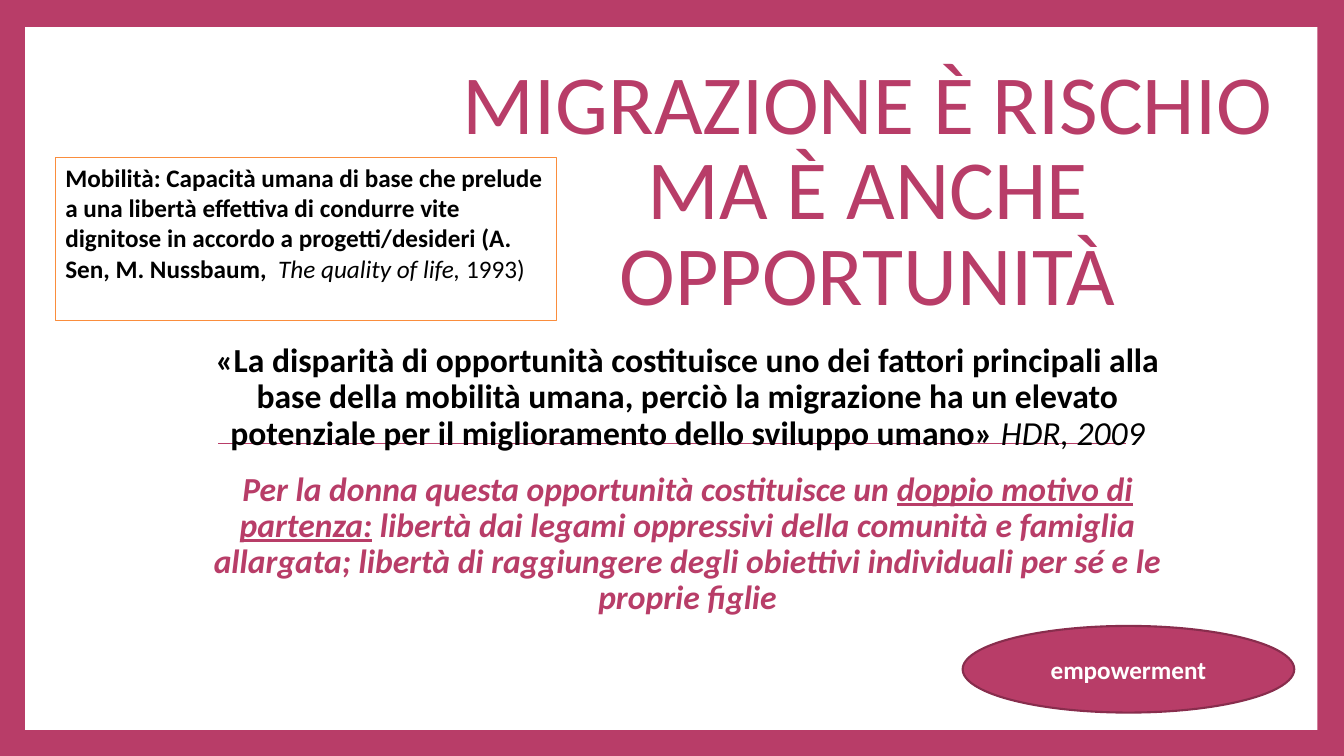
import pptx
import pptx.util
import pptx.dml.color
import pptx.enum.shapes
import pptx.enum.text
import pptx.oxml

Pt = pptx.util.Pt
ALIGN = pptx.enum.text.PP_ALIGN
ANCHOR = pptx.enum.text.MSO_ANCHOR
SHAPE = pptx.enum.shapes.MSO_SHAPE
COLOURS = {"rose": "B83D68", "plum": "882D4D", "orange": "FA8D3D",
           "white": "FFFFFF", "black": "000000"}


def colour(name):
    """Return the named colour."""
    return pptx.dml.color.RGBColor.from_string(COLOURS[name])


def apply(target, values):
    """Set each attribute named in values."""
    for name, value in values.items():
        setattr(target, name, value)


def write(frame, paras, anchor, size, para_format):
    """Fill a frame with paragraphs of (text, colour, font values) spans."""
    apply(frame, {"word_wrap": True, "vertical_anchor": anchor,
                  "auto_size": pptx.enum.text.MSO_AUTO_SIZE.NONE})
    for index, spans in enumerate(paras):
        para = frame.add_paragraph() if index else frame.paragraphs[0]
        apply(para, para_format)
        for text, tint, values in spans:
            span = para.add_run()
            span.text = text
            apply(span.font, {"name": "Calibri", "size": Pt(size), **values})
            span.font.color.rgb = colour(tint)


def add_box(page, kind, box, fill=None, line=None, width=0.75):
    """Add a flat preset shape."""
    shape = page.shapes.add_shape(kind, *map(Pt, box))
    shape.shadow.inherit = False
    if fill:
        shape.fill.solid()
        shape.fill.fore_color.rgb = colour(fill)
    else:
        shape.fill.background()
    if line:
        shape.line.color.rgb = colour(line)
        shape.line.width = Pt(width)
    else:
        shape.line.fill.background()
    return shape


def draw_frame(page, box):
    """Draw the white panel and the thin rule across it."""
    left, top, width, height = box
    add_box(page, SHAPE.RECTANGLE, box, fill="white")
    rule_left, rule_top = left + 138, top + 297.4
    rule = page.shapes.add_connector(
        pptx.enum.shapes.MSO_CONNECTOR.STRAIGHT,
        *map(Pt, (rule_left, rule_top, rule_left + 648, rule_top)))
    rule.line.color.rgb = colour("rose")
    rule.line.width = Pt(0.79)
    rule.element.spPr.append(pptx.oxml.parse_xml(
        '<a:effectLst xmlns:a="http://schemas.openxmlformats.org/drawingml/2006/main"/>'))


def draw_title(page, box):
    """Place the title above the panel."""
    title = page.shapes.title
    apply(title, dict(zip(("left", "top", "width", "height"), map(Pt, box))))
    title.element.getparent().append(title.element)
    write(title.text_frame,
          [[("MIGRAZIONE È RISCHIO MA È ANCHE OPPORTUNITÀ", "rose", {})]],
          ANCHOR.BOTTOM, 60, {"alignment": ALIGN.CENTER, "line_spacing": 0.85})


def draw_body(page, box):
    """Write the quotation and its comment."""
    body = page.shapes.add_textbox(*map(Pt, box))
    strong = {"bold": True, "italic": True}
    write(body.text_frame, [
        [("«La disparità di opportunità costituisce uno dei fattori principali "
          "alla base della mobilità umana, perciò la migrazione ha un elevato "
          "potenziale per il miglioramento dello sviluppo umano» ",
          "black", {"bold": True}),
         ("HDR, 2009", "black", {"italic": True})],
        [("Per la donna questa opportunità costituisce un ", "rose", strong),
         ("doppio motivo di partenza:", "rose", {**strong, "underline": True}),
         (" libertà dai legami oppressivi della comunità e famiglia allargata; "
          "libertà di raggiungere degli obiettivi individuali per sé e le "
          "proprie figlie", "rose", strong)],
    ], ANCHOR.TOP, 24, {"alignment": ALIGN.CENTER, "line_spacing": 0.9,
                        "space_before": Pt(14)})


def draw_definition(page, box):
    """Draw the outlined definition of mobility."""
    note = add_box(page, SHAPE.RECTANGLE, box, line="orange")
    write(note.text_frame, [[
        ("Mobilità: Capacità umana di base che prelude a una libertà effettiva "
         "di condurre vite dignitose in accordo a progetti/desideri (A. Sen, "
         "M. Nussbaum, ", "black", {"bold": True}),
        (" The quality of life, ", "black", {"italic": True}),
        ("1993)", "black", {}),
    ]], ANCHOR.TOP, 18, {"alignment": ALIGN.LEFT})


def draw_keyword(page, box):
    """Draw the keyword ellipse."""
    oval = add_box(page, SHAPE.OVAL, box, fill="rose", line="plum", width=1.5)
    write(oval.text_frame, [[("empowerment", "white", {"bold": True})]],
          ANCHOR.MIDDLE, 18, {"alignment": ALIGN.CENTER})


def main():
    """Build and save the deck."""
    deck = pptx.Presentation()
    apply(deck, {"slide_width": Pt(960), "slide_height": Pt(540)})
    page = deck.slides.add_slide(deck.slide_layouts[5])
    page.background.fill.solid()
    page.background.fill.fore_color.rgb = colour("rose")
    draw_frame(page, (18, 19.4, 923, 502))
    draw_title(page, (300.2, 21.6, 639.4, 212.4))
    draw_body(page, (124.6, 241.9, 733, 249))
    draw_definition(page, (39.6, 112.3, 357.8, 116.6))
    draw_keyword(page, (687.6, 447.1, 236.9, 61.9))
    deck.save("out.pptx")


if __name__ == "__main__":
    main()
